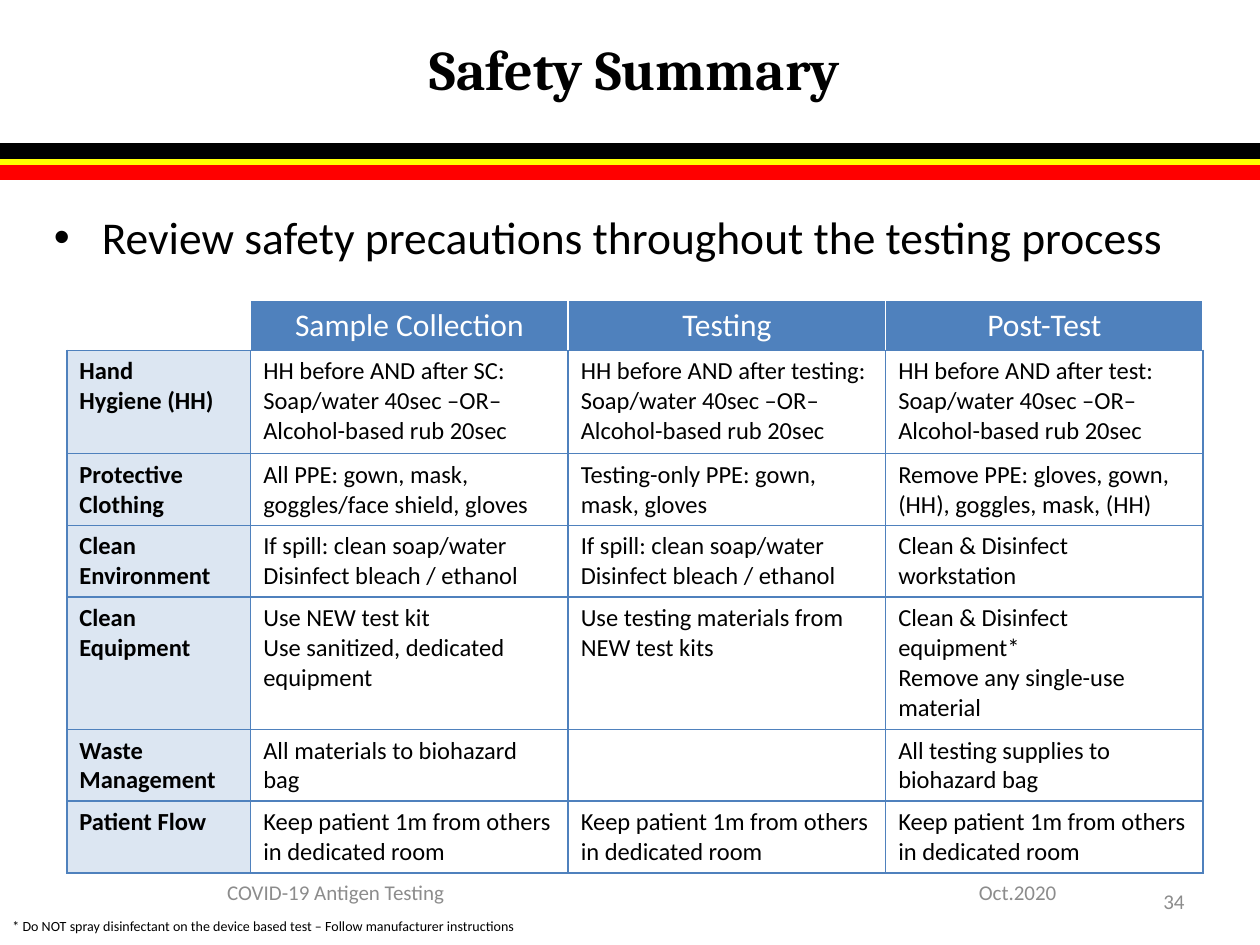
from lxml import etree
from pptx import Presentation
from pptx import util as u
from pptx.dml import color
from pptx.enum import shapes, text
from pptx.oxml import ns

COLORS = {
    "black": "000000", "white": "FFFFFF", "yellow": "FFFF00", "red": "FF0000",
    "blue": "4F81BD", "pale": "DCE6F2", "gray": "8C8C8C",
}
BANDS = [("yellow", 1.29), ("red", 1.37), ("black", 1.2)]
HEADERS = ["", "Sample Collection", "Testing", "Post-Test"]
SOAP = "Soap/water 40sec –OR– Alcohol-based rub 20sec"
SPILL = ["If spill: clean soap/water", "Disinfect bleach / ethanol"]
DISTANCE = ["Keep patient 1m from others in dedicated room"]
ROWS = [
    [["Hand", "Hygiene (HH)"]]
    + [[f"HH before AND after {step}:", SOAP] for step in ("SC", "testing", "test")],
    [["Protective Clothing"], ["All PPE: gown, mask, goggles/face shield, gloves"],
     ["Testing-only PPE: gown, mask, gloves"],
     ["Remove PPE: gloves, gown, (HH), goggles, mask, (HH)"]],
    [["Clean Environment"], SPILL, SPILL, ["Clean & Disinfect workstation"]],
    [["Clean Equipment"], ["Use NEW test kit", "Use sanitized, dedicated equipment"],
     ["Use testing materials from NEW test kits"],
     ["Clean & Disinfect equipment*", "Remove any single-use material"]],
    [["Waste Management"], ["All materials to biohazard bag"], [],
     ["All testing supplies to biohazard bag"]],
    [["Patient Flow"], DISTANCE, DISTANCE, DISTANCE],
]
COLUMN_WIDTHS = [1.46, 2.52, 2.52, 2.52]
ROW_HEIGHTS = [0.4, 0.82, 0.57, 0.57, 1.05, 0.57, 0.57]
ALIGN = text.PP_ALIGN


def rgb(name):
    """Return the named colour."""
    return color.RGBColor.from_string(COLORS[name])


def add_run(p, words, size, tint="black", bold=False, font="Calibri"):
    """Append a formatted run to a paragraph."""
    r = p.add_run()
    r.text = words
    r.font.name, r.font.size, r.font.bold = font, u.Pt(size), bold
    r.font.color.rgb = rgb(tint)


def add_text(s, box, words, size, align=ALIGN.LEFT,
             anchor=text.MSO_ANCHOR.MIDDLE, **style):
    """Add a one-paragraph text box and return its paragraph."""
    tf = s.shapes.add_textbox(*map(u.Inches, box)).text_frame
    tf.word_wrap = True
    tf.vertical_anchor = anchor
    p = tf.paragraphs[0]
    p.alignment = align
    add_run(p, words, size, **style)
    return p


def add_bullet(p, indent):
    """Give a paragraph a hanging round bullet."""
    pPr = p._p.get_or_add_pPr()
    pPr.set("marL", str(u.Inches(indent)))
    pPr.set("indent", str(-u.Inches(indent)))
    etree.SubElement(pPr, ns.qn("a:buFont")).set("typeface", "Arial")
    etree.SubElement(pPr, ns.qn("a:buChar")).set("char", "•")


def add_band(s, tint, y):
    """Draw one flag stripe across the slide."""
    sp = s.shapes.add_connector(shapes.MSO_CONNECTOR.STRAIGHT, u.Inches(-0.03),
                                u.Inches(y), u.Inches(10), u.Inches(y))
    sp.line.color.rgb = rgb(tint)
    sp.line.width = u.Pt(9)
    etree.SubElement(sp._element.spPr, ns.qn("a:effectLst"))


def set_borders(cell, **sides):
    """Set one-point cell borders, given in the order L, R, T, B."""
    tcPr = cell._tc.get_or_add_tcPr()
    for i, (side, tint) in enumerate(sides.items()):
        ln = etree.Element(ns.qn(f"a:ln{side}"), w=str(u.Pt(1)))
        fill = etree.SubElement(ln, ns.qn("a:solidFill"))
        etree.SubElement(fill, ns.qn("a:srgbClr")).set("val", COLORS[tint])
        tcPr.insert(i, ln)


def fill_cell(cell, lines, fill, edge, align=ALIGN.LEFT, **style):
    """Write the lines of a cell and set its fill and borders."""
    tf = cell.text_frame
    for i, line in enumerate(lines):
        p = tf.add_paragraph() if i else tf.paragraphs[0]
        p.alignment = align
        add_run(p, line, **style)
    if fill:
        cell.fill.solid()
        cell.fill.fore_color.rgb = rgb(fill)
    else:
        cell.fill.background()
    set_borders(cell, L=edge, R=edge, T=edge, B="blue")


def add_safety_table(s):
    """Add the table of precautions by testing stage."""
    table = s.shapes.add_table(
        len(ROW_HEIGHTS), len(COLUMN_WIDTHS), u.Inches(0.53), u.Inches(2.38),
        u.Inches(sum(COLUMN_WIDTHS)), u.Inches(sum(ROW_HEIGHTS))).table
    table.first_row = table.horz_banding = False
    for column, width in zip(table.columns, COLUMN_WIDTHS):
        column.width = u.Inches(width)
    for row, height in zip(table.rows, ROW_HEIGHTS):
        row.height = u.Inches(height)
    for j, header in enumerate(HEADERS):
        fill_cell(table.cell(0, j), [header] if header else [],
                  "blue" if header else None, "white", ALIGN.CENTER,
                  size=18, tint="white")
    for i, row in enumerate(ROWS, 1):
        for j, lines in enumerate(row):
            fill_cell(table.cell(i, j), lines, "white" if j else "pale", "blue",
                      size=14, bold=j == 0)
    for j in range(len(HEADERS)):
        table.cell(0, j).vertical_anchor = text.MSO_ANCHOR.TOP


def main():
    """Build and save the safety summary slide."""
    prs = Presentation()
    prs.slide_width, prs.slide_height = u.Inches(10), u.Inches(7.5)
    s = prs.slides.add_slide(prs.slide_layouts[6])
    for tint, y in BANDS:
        add_band(s, tint, y)
    add_text(s, (0.33, 0.08, 9.42, 0.92), "Safety Summary", 32, ALIGN.CENTER,
             bold=True, font="Cambria")
    p = add_text(s, (0.33, 1.61, 9.01, 0.7),
                 "Review safety precautions throughout the testing process", 26,
                 anchor=text.MSO_ANCHOR.TOP)
    add_bullet(p, 0.38)
    add_text(s, (7.17, 6.95, 2.33, 0.4), "34", 12, ALIGN.RIGHT, tint="gray")
    add_text(s, (7.67, 6.88, 2.33, 0.4), "Oct.2020", 12, tint="gray")
    add_text(s, (0, 6.88, 5.33, 0.4), "COVID-19 Antigen Testing", 12,
             ALIGN.CENTER, tint="gray")
    add_safety_table(s)
    add_text(s, (0, 7.23, 4.39, 0.24),
             "* Do NOT spray disinfectant on the device based test"
             " – Follow manufacturer instructions", 8,
             anchor=text.MSO_ANCHOR.TOP)
    prs.save("out.pptx")


if __name__ == "__main__":
    main()
